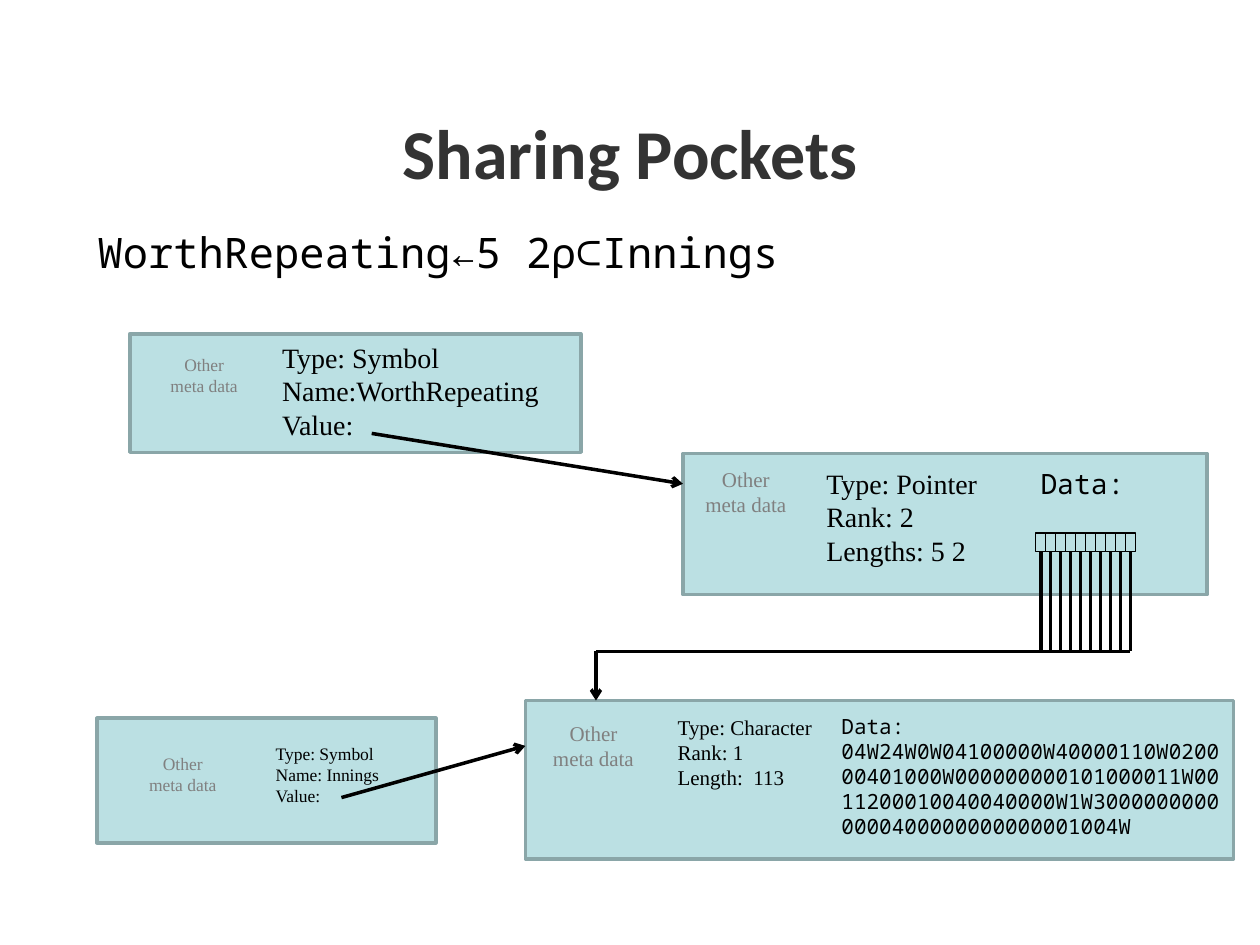
"""Build the Sharing Pockets slide, a diagram of symbols and the data they share."""
from dataclasses import dataclass

from lxml.etree import SubElement
from pptx import Presentation
from pptx.dml.color import RGBColor
from pptx.enum.shapes import MSO_CONNECTOR, MSO_SHAPE
from pptx.enum.text import MSO_ANCHOR, PP_ALIGN
from pptx.oxml.ns import qn
from pptx.shapes.autoshape import Shape
from pptx.shapes.connector import Connector
from pptx.slide import Slide
from pptx.util import Inches, Pt

COLORS = {
    "title": "333333",
    "text": "000000",
    "muted": "808080",
    "pocket": "BBE0E3",
    "border": "8AA6A8",
}
SERIF = "Times New Roman"
MONO = "Noto Sans Mono"
META = ("Other", "meta data")
CHARACTERS = (
    "04W24W0W04100000W40000110W020000401000W000000000101000011W00"
    "11200010040040000W1W30000000000000400000000000001004W"
)
CELL_COUNT = 10
CELL_LEFT, CELL_TOP = 8.22, 4.23
CELL_WIDTH, CELL_HEIGHT = 0.08, 0.15
CELL_PITCH = 0.79 / CELL_COUNT
BUS_LEFT, BUS_TOP = 4.73, 5.17


@dataclass
class Box:
    left: float
    top: float
    width: float
    height: float

    def lengths(self) -> tuple:
        return tuple(Inches(v) for v in (self.left, self.top, self.width, self.height))


@dataclass
class Label:
    box: Box
    lines: tuple
    size: int
    font: str = SERIF
    color: str = "text"
    align: PP_ALIGN = PP_ALIGN.LEFT


@dataclass
class Pocket:
    box: Box
    labels: tuple


def meta_label(box: Box, size: int) -> Label:
    return Label(box, META, size, color="muted", align=PP_ALIGN.CENTER)


POCKETS = (
    Pocket(Box(4.17, 5.56, 5.62, 1.26), (
        Label(Box(6.58, 5.61, 3.22, 1.11), ("Data:", CHARACTERS), 12, MONO),
        meta_label(Box(4.2, 5.67, 1.02, 0.5), 12),
        Label(Box(5.28, 5.62, 1.41, 0.71), ("Type: Character", "Rank: 1", "Length:  113"), 12),
    )),
    Pocket(Box(0.77, 5.7, 2.69, 0.99), (
        meta_label(Box(0.84, 5.93, 1.22, 0.44), 10),
        Label(Box(2.09, 5.85, 1.24, 0.61), ("Type: Symbol", "Name: Innings", "Value:"), 10),
    )),
    Pocket(Box(1.03, 2.65, 3.58, 0.94), (
        meta_label(Box(1.01, 2.76, 1.22, 0.44), 10),
        Label(Box(2.14, 2.65, 2.62, 0.91), ("Type: Symbol", "Name:WorthRepeating", "Value:"), 16),
    )),
    Pocket(Box(5.42, 3.6, 4.16, 1.12), (
        Label(Box(8.16, 3.65, 1.12, 0.37), ("Data:",), 16, MONO),
        meta_label(Box(5.4, 3.65, 1.04, 0.5), 12),
        Label(Box(6.46, 3.65, 1.53, 0.91), ("Type: Pointer", "Rank: 2", "Lengths: 5 2"), 16),
    )),
)


def rgb(name: str) -> RGBColor:
    return RGBColor.from_string(COLORS[name])


def set_font(font, color: str, **values) -> None:
    for name, value in values.items():
        setattr(font, name, value)
    font.color.rgb = rgb(color)


def add_label(slide: Slide, label: Label) -> None:
    frame = slide.shapes.add_textbox(*label.box.lengths()).text_frame
    frame.word_wrap = True
    frame.text = "\n".join(label.lines)
    for paragraph in frame.paragraphs:
        paragraph.alignment = label.align
        set_font(paragraph.runs[0].font, label.color, name=label.font, size=Pt(label.size))


def add_rectangle(slide: Slide, box: Box, border: str, weight: float) -> Shape:
    shape = slide.shapes.add_shape(MSO_SHAPE.RECTANGLE, *box.lengths())
    shape.shadow.inherit = False
    shape.fill.solid()
    shape.fill.fore_color.rgb = rgb("pocket")
    shape.line.color.rgb = rgb(border)
    shape.line.width = Pt(weight)
    return shape


def add_line(slide: Slide, start: tuple, end: tuple, arrow: bool = False) -> Connector:
    points = [Inches(value) for value in (*start, *end)]
    connector = slide.shapes.add_connector(MSO_CONNECTOR.STRAIGHT, *points)
    connector.line.color.rgb = rgb("text")
    connector.line.width = Pt(2)
    if arrow:
        SubElement(connector.line._get_or_add_ln(), qn("a:tailEnd"), type="arrow")
    SubElement(connector._element.spPr, qn("a:effectLst"))
    return connector


def add_pointer_cells(slide: Slide) -> None:
    for index in range(CELL_COUNT):
        left = CELL_LEFT + index * CELL_PITCH
        cell = add_rectangle(slide, Box(left, CELL_TOP, CELL_WIDTH, CELL_HEIGHT), "text", 0.75)
        center = left + CELL_WIDTH / 2
        wire = add_line(slide, (center, CELL_TOP + CELL_HEIGHT), (center, BUS_TOP))
        wire.begin_connect(cell, 2)
    add_line(slide, (BUS_LEFT, BUS_TOP), (center, BUS_TOP))
    add_line(slide, (BUS_LEFT, BUS_TOP), (BUS_LEFT, 5.56), arrow=True)


def main() -> None:
    presentation = Presentation()
    presentation.slide_width, presentation.slide_height = Inches(10), Inches(7.5)
    slide = presentation.slides.add_slide(presentation.slide_layouts[5])

    title = slide.shapes.title
    title.left, title.top, title.width, title.height = Box(0.5, 0.77, 9, 0.86).lengths()
    title.text_frame.text = "Sharing Pockets"
    title.text_frame.vertical_anchor = MSO_ANCHOR.MIDDLE
    paragraph = title.text_frame.paragraphs[0]
    paragraph.alignment = PP_ALIGN.CENTER
    set_font(paragraph.runs[0].font, "title", name="Calibri", size=Pt(40), bold=True)

    add_label(slide, Label(Box(0.58, 1.75, 5.79, 0.5), ("WorthRepeating←5 2⍴⊂Innings",),
                           24, MONO, align=PP_ALIGN.CENTER))
    for pocket in POCKETS:
        add_rectangle(slide, pocket.box, "border", 2)
        for label in pocket.labels:
            add_label(slide, label)
    add_line(slide, (2.95, 3.44), (5.42, 3.84), arrow=True)
    add_line(slide, (2.71, 6.33), (4.17, 5.92), arrow=True)
    add_pointer_cells(slide)
    presentation.save("out.pptx")


if __name__ == "__main__":
    main()
